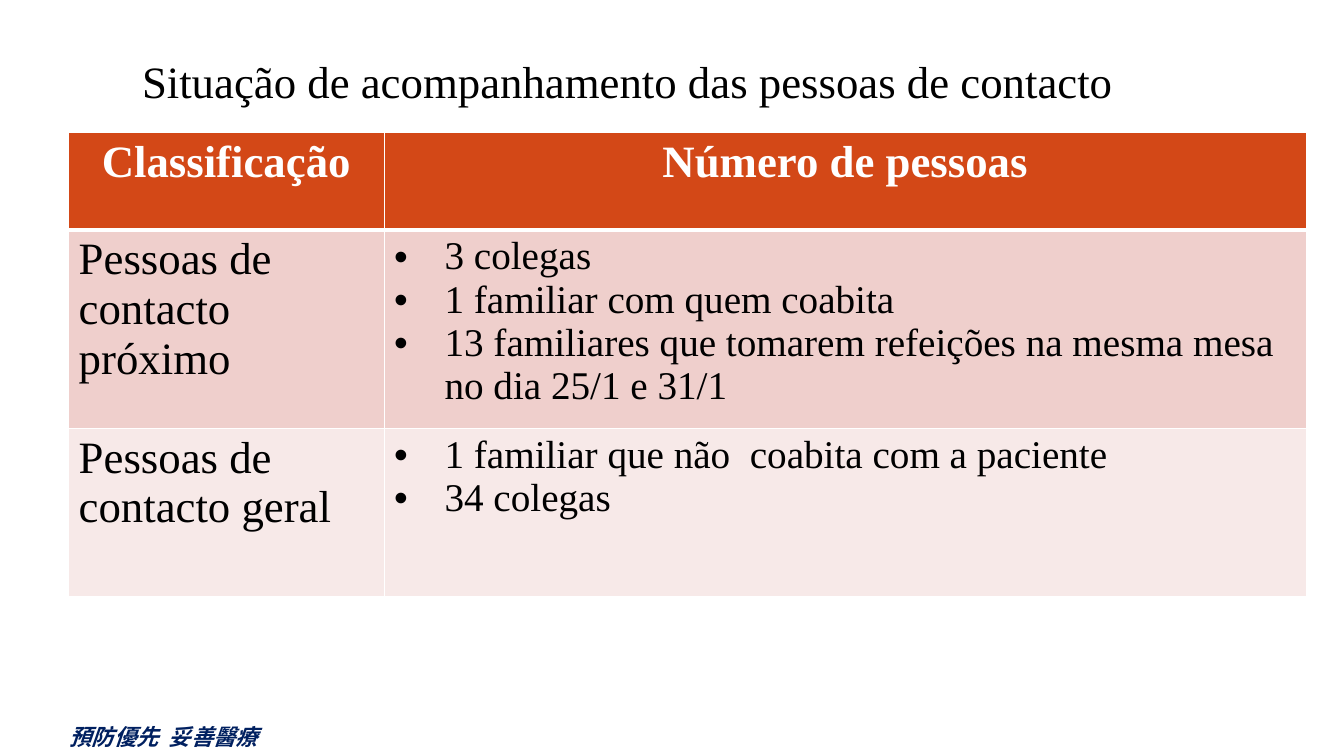
"""Build a slide with a table on the follow-up of contact persons."""
import pptx
import pptx.dml.color
import pptx.enum.text
import pptx.oxml
import pptx.oxml.ns
import pptx.util
from lxml import etree

Cm = pptx.util.Cm
ALIGN = pptx.enum.text.PP_ALIGN
ANCHOR = pptx.enum.text.MSO_ANCHOR
SERIF = "Times New Roman"
COLORS = {"text": "000000", "white": "FFFFFF", "navy": "002060",
          "header": "D34817", "close": "EFCFCC", "general": "F7E9E8"}
COL_WIDTHS = (7.95, 23.24)
ROW_HEIGHTS = (2.46, 3.71, 4.24)
HEADERS = ("Classificação", "Número de pessoas")
GROUPS = (
    ("close", "Pessoas de contacto próximo",
     ("3 colegas", "1 familiar com quem coabita",
      "13 familiares que tomarem refeições na mesma mesa no dia 25/1 e 31/1")),
    ("general", "Pessoas de contacto geral",
     ("1 familiar que não  coabita com a paciente", "34 colegas")),
)


def rgb(name):
    """Return the named colour."""
    return pptx.dml.color.RGBColor.from_string(COLORS[name])


def add_child(parent, tag, **attrs):
    """Append a DrawingML element and return it."""
    return etree.SubElement(parent, pptx.oxml.ns.qn(tag), **attrs)


def write(tf, *lines, size=32, font=SERIF, color="text", bold=False,
          italic=False, align=ALIGN.LEFT, bullet=False):
    """Write one paragraph per line in a text frame."""
    for i, line in enumerate(lines):
        p = tf.add_paragraph() if i else tf.paragraphs[0]
        p.alignment = align
        if bullet:
            pPr = p._p.get_or_add_pPr()
            pPr.set("marL", str(Cm(1.27)))
            pPr.set("indent", str(-Cm(1.27)))
            add_child(pPr, "a:buFont", typeface="Arial")
            add_child(pPr, "a:buChar", char="•")
        r = p.add_run()
        r.text = line
        f = r.font
        f.size, f.bold, f.italic = pptx.util.Pt(size), bold, italic
        f.color.rgb, f.name = rgb(color), font
        add_child(r._r.get_or_add_rPr(), "a:ea", typeface=font)


def add_text(s, text, left, top, width, height, anchor=ANCHOR.TOP, **fmt):
    """Add a wrapped text box."""
    tf = s.shapes.add_textbox(Cm(left), Cm(top), Cm(width), Cm(height)).text_frame
    tf.word_wrap = True
    tf.vertical_anchor = anchor
    write(tf, text, **fmt)
    return tf


def fill_cell(cell, *lines, fill, top=1, bottom=1, **fmt):
    """Give a cell its text, fill and white borders."""
    write(cell.text_frame, *lines, **fmt)
    tcPr = cell._tc.get_or_add_tcPr()
    for side, width in (("L", 1), ("R", 1), ("T", top), ("B", bottom)):
        ln = add_child(tcPr, "a:ln" + side, w=str(pptx.util.Pt(width)))
        add_child(add_child(ln, "a:solidFill"), "a:srgbClr", val=COLORS["white"])
    cell.fill.solid()
    cell.fill.fore_color.rgb = rgb(fill)


def add_contacts_table(s):
    """Add the table of contact groups."""
    table = s.shapes.add_table(len(ROW_HEIGHTS), len(COL_WIDTHS), Cm(1.73), Cm(3.33),
                               Cm(sum(COL_WIDTHS)), Cm(sum(ROW_HEIGHTS))).table
    for column, width in zip(table.columns, COL_WIDTHS):
        column.width = Cm(width)
    for row, height in zip(table.rows, ROW_HEIGHTS):
        row.height = Cm(height)
    for i, header in enumerate(HEADERS):
        fill_cell(table.cell(0, i), header, fill="header", bottom=3,
                  color="white", bold=True, align=ALIGN.CENTER)
    for i, (fill, group, people) in enumerate(GROUPS, 1):
        top = 3 if i == 1 else 1
        fill_cell(table.cell(i, 0), group, fill=fill, top=top)
        fill_cell(table.cell(i, 1), *people, fill=fill, top=top, size=28, bullet=True)


def main():
    """Build and save the presentation."""
    prs = pptx.Presentation()
    prs.slide_width, prs.slide_height = Cm(33.87), Cm(19.05)
    s = prs.slides.add_slide(prs.slide_layouts[6])
    add_text(s, "預防優先  妥善醫療", 0, 18.11, 8.26, 0.94, size=16,
             font="Noto Sans CJK SC", color="navy", bold=True, italic=True,
             align=ALIGN.CENTER)
    title = add_text(s, "Situação de acompanhamento das pessoas de contacto",
                     3.33, 0.91, 25.6, 2.39, anchor=ANCHOR.MIDDLE)
    title.margin_bottom = Cm(0.25)
    add_contacts_table(s)
    prs.save("out.pptx")


if __name__ == "__main__":
    main()
